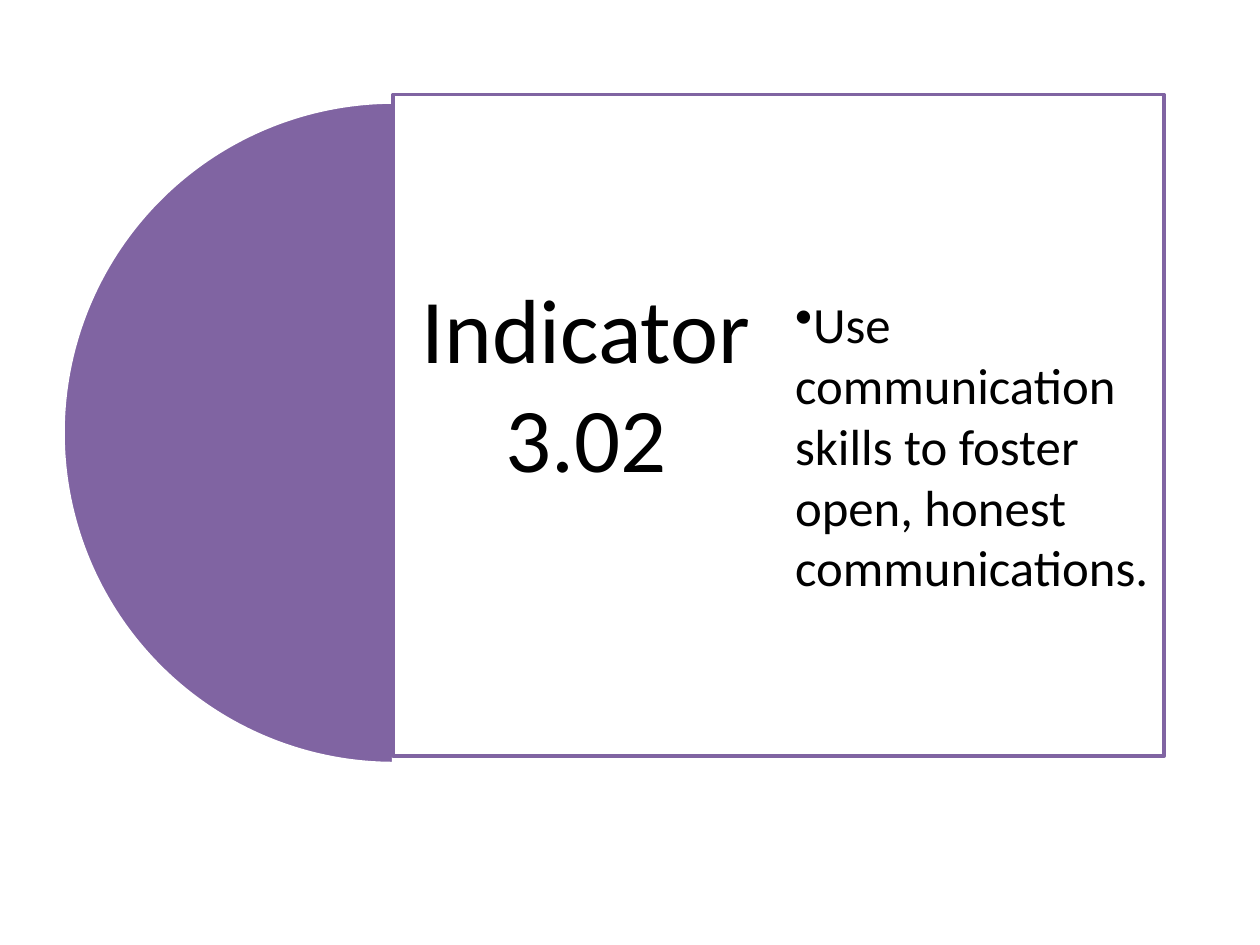
"""Build the Indicator 3.02 slide with a half disc and a framed panel."""
from lxml import etree
from pptx import Presentation
from pptx.dml.color import RGBColor
from pptx.enum.shapes import MSO_SHAPE
from pptx.enum.text import MSO_ANCHOR, PP_ALIGN
from pptx.oxml.ns import qn
from pptx.util import Inches, Pt

PIE, RECT = MSO_SHAPE.PIE, MSO_SHAPE.RECTANGLE
MIDDLE = MSO_ANCHOR.MIDDLE
LEFT, CENTER = PP_ALIGN.LEFT, PP_ALIGN.CENTER
PURPLE = RGBColor(0x80, 0x64, 0xA2)
WHITE = RGBColor(0xFF, 0xFF, 0xFF)
BLACK = RGBColor(0, 0, 0)
SIDE = 5.25


def add_shape(kind, left, top, width, fill, line):
    shape = slide.shapes.add_shape(
        kind, Inches(left), Inches(top), Inches(width), Inches(SIDE))
    shape.shadow.inherit = False
    shape.fill.solid()
    shape.fill.fore_color.rgb = fill
    shape.line.color.rgb = line
    shape.line.width = Pt(2)
    return shape


def add_text(text, left, top, inset, bottom, size, align):
    box = slide.shapes.add_textbox(
        Inches(left), Inches(top), Inches(3.06), Inches(SIDE))
    frame = box.text_frame
    frame.word_wrap = True
    frame.vertical_anchor = MIDDLE
    frame.margin_left = frame.margin_right = frame.margin_top = Inches(inset)
    frame.margin_bottom = Inches(bottom)
    frame.text = text
    para = frame.paragraphs[0]
    para.alignment = align
    font = para.runs[0].font
    font.name = "Calibri"
    font.size = Pt(size)
    font.color.rgb = BLACK
    return para


prs = Presentation()
prs.slide_width = Inches(10)
prs.slide_height = Inches(7.5)
slide = prs.slides.add_slide(prs.slide_layouts[6])

disc = add_shape(PIE, 0.5, 0.81, SIDE, PURPLE, WHITE)
disc.adjustments[0] = 54
disc.adjustments[1] = 162

panel = add_shape(RECT, 3.12, 0.75, 6.12, WHITE, PURPLE)
color = panel.fill._xPr.find(qn("a:solidFill"))[0]
etree.SubElement(color, qn("a:alpha"), val="90000")

add_text("Indicator 3.02", 3.12, 0.75, 0.22, 0.91, 52, CENTER)
point = add_text(
    "Use communication skills to foster open, honest communications.",
    6.19, 1.1, 0.12, 0.51, 29, LEFT)
point.level = 1
props = point._p.get_or_add_pPr()
props.set("marL", "0")
props.set("indent", "0")
etree.SubElement(props, qn("a:buChar"), char="•")

prs.save("out.pptx")
